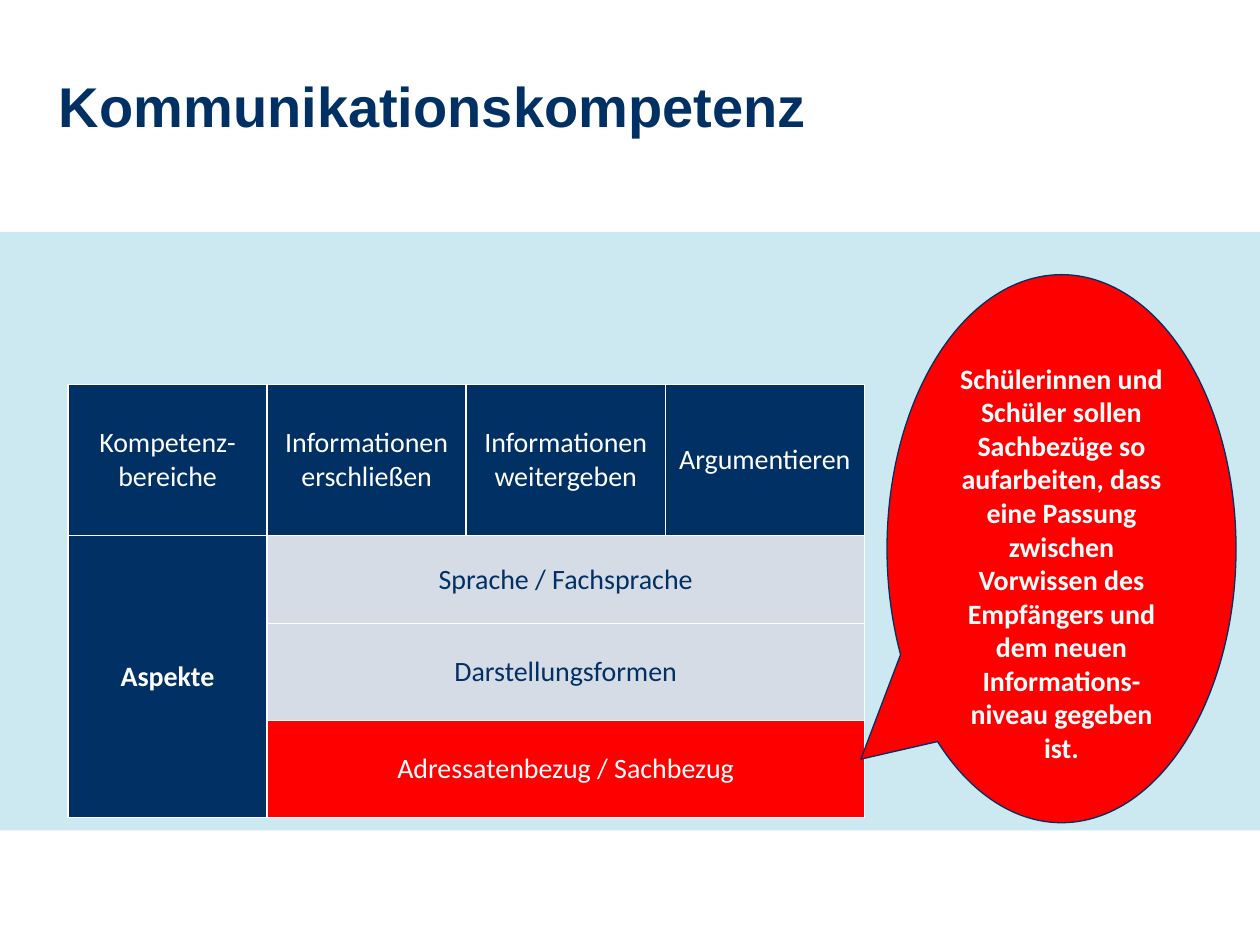
from lxml.etree import SubElement
from pptx import Presentation
from pptx.dml.color import RGBColor
from pptx.enum.shapes import MSO_SHAPE as Shape
from pptx.enum.text import MSO_ANCHOR as Anchor, PP_ALIGN as Align
from pptx.oxml.ns import qn
from pptx.util import Inches, Pt

NAVY = RGBColor(0x00, 0x30, 0x64)
PALE_BLUE = RGBColor(0xCC, 0xE9, 0xF2)
GREY = RGBColor(0xD6, 0xDC, 0xE5)
RED = RGBColor(0xFF, 0x00, 0x00)
WHITE = RGBColor(0xFF, 0xFF, 0xFF)

WIDTH, HEIGHT = 10, 7.5
COLUMN_WIDTH = 1.58
ROW_HEIGHTS = [1.2, 0.7, 0.77, 0.77]
AREAS = ["Kompetenz-bereiche", "Informationen erschließen",
         "Informationen weitergeben", "Argumentieren"]
ASPECTS = [("Sprache / Fachsprache", GREY, NAVY),
           ("Darstellungsformen", GREY, NAVY),
           ("Adressatenbezug / Sachbezug", RED, WHITE)]
MESSAGE = ("Schülerinnen und Schüler sollen Sachbezüge so aufarbeiten, dass "
           "eine Passung zwischen Vorwissen des Empfängers und dem neuen "
           "Informations-niveau gegeben ist.")


def write(frame, text, color, size=16, name="Calibri", bold=False, align=Align.CENTER):
    """Put one formatted paragraph into a text frame."""
    paragraph = frame.paragraphs[0]
    paragraph.text = text
    paragraph.alignment = align
    font = paragraph.font
    font.size, font.name, font.bold = Pt(size), name, bold
    font.color.rgb = color


def add_filled(slide, kind, box, fill):
    """Add a preset shape with a plain fill and no shadow."""
    shape = slide.shapes.add_shape(kind, *map(Inches, box))
    shape.shadow.inherit = False
    shape.fill.solid()
    shape.fill.fore_color.rgb = fill
    return shape


def add_title(slide, text):
    """Add the slide heading on a single line."""
    frame = slide.shapes.add_textbox(*map(Inches, (0.37, 0.52, 6.4, 0.76))).text_frame
    frame.word_wrap = True
    write(frame, text, NAVY, 32, "Arial", True, Align.LEFT)


def set_borders(cell, color, width):
    """Draw all four borders of a cell."""
    properties = cell._tc.get_or_add_tcPr()
    for position, side in enumerate(("a:lnL", "a:lnR", "a:lnT", "a:lnB")):
        line = properties.makeelement(qn(side), {"w": str(Pt(width))})
        fill = SubElement(line, qn("a:solidFill"))
        SubElement(fill, qn("a:srgbClr"), val=str(color))
        properties.insert(position, line)


def fill_cell(cell, text, fill, color, bold=False):
    """Write centred text into a coloured cell."""
    cell.fill.solid()
    cell.fill.fore_color.rgb = fill
    cell.vertical_anchor = Anchor.MIDDLE
    write(cell.text_frame, text, color, bold=bold)


def add_competence_table(slide):
    """Add the table of competence areas and their aspects."""
    rows, columns = len(ROW_HEIGHTS), len(AREAS)
    box = (0.54, 3.05, columns * COLUMN_WIDTH, sum(ROW_HEIGHTS))
    table = slide.shapes.add_table(rows, columns, *map(Inches, box)).table
    for column in table.columns:
        column.width = Inches(COLUMN_WIDTH)
    for row, height in zip(table.rows, ROW_HEIGHTS):
        row.height = Inches(height)
    for index, area in enumerate(AREAS):
        fill_cell(table.cell(0, index), area, NAVY, WHITE)
    table.cell(1, 0).merge(table.cell(rows - 1, 0))
    fill_cell(table.cell(1, 0), "Aspekte", NAVY, WHITE, True)
    for index, (aspect, fill, color) in enumerate(ASPECTS, 1):
        table.cell(index, 1).merge(table.cell(index, columns - 1))
        fill_cell(table.cell(index, 1), aspect, fill, color)
    for cell in table.iter_cells():
        set_borders(cell, WHITE, 0.96)


def add_callout(slide, text):
    """Add the speech bubble that points at the last aspect."""
    callout = add_filled(slide, Shape.OVAL_CALLOUT, (7.04, 2.18, 2.77, 4.35), RED)
    callout.adjustments[0], callout.adjustments[1] = -0.575, 0.384
    callout.line.color.rgb = NAVY
    callout.line.width = Pt(0.75)
    callout.text_frame.word_wrap = True
    callout.text_frame.vertical_anchor = Anchor.TOP
    write(callout.text_frame, text, WHITE, bold=True)


def main():
    """Build the slide and save it."""
    presentation = Presentation()
    presentation.slide_width, presentation.slide_height = Inches(WIDTH), Inches(HEIGHT)
    slide = presentation.slides.add_slide(presentation.slide_layouts[6])
    band = add_filled(slide, Shape.RECTANGLE, (0, 1.84, WIDTH, 4.75), PALE_BLUE)
    band.line.fill.background()
    add_title(slide, "Kommunikationskompetenz")
    add_competence_table(slide)
    add_callout(slide, MESSAGE)
    presentation.save("out.pptx")


if __name__ == "__main__":
    main()
